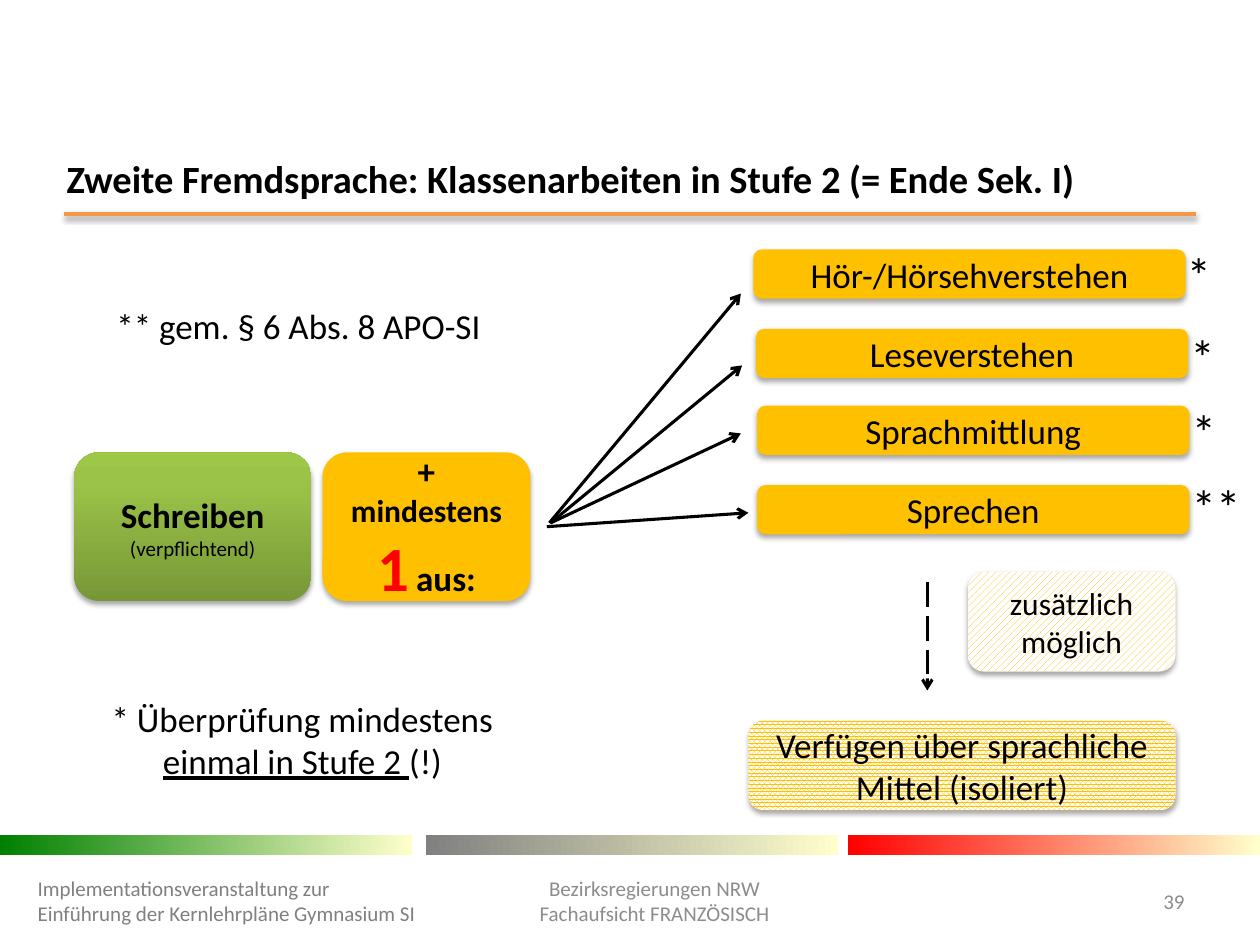
from copy import deepcopy

from lxml import etree
from pptx import Presentation
from pptx.dml.color import RGBColor
from pptx.enum.dml import MSO_LINE, MSO_PATTERN
from pptx.enum.shapes import MSO_CONNECTOR, MSO_SHAPE
from pptx.enum.text import MSO_ANCHOR, PP_ALIGN
from pptx.oxml.ns import qn
from pptx.util import Inches, Pt

LEFT, CENTER, RIGHT = PP_ALIGN.LEFT, PP_ALIGN.CENTER, PP_ALIGN.RIGHT
TOP, MIDDLE = MSO_ANCHOR.TOP, MSO_ANCHOR.MIDDLE
RECT, ROUNDED = MSO_SHAPE.RECTANGLE, MSO_SHAPE.ROUNDED_RECTANGLE
STRAIGHT = MSO_CONNECTOR.STRAIGHT
LONG_DASH = MSO_LINE.LONG_DASH
DOTTED, DIAGONAL = MSO_PATTERN.PERCENT_80, MSO_PATTERN.WIDE_UPWARD_DIAGONAL

BLACK = RGBColor(0x00, 0x00, 0x00)
WHITE = RGBColor(0xFF, 0xFF, 0xFF)
RED = RGBColor(0xFF, 0x00, 0x00)
GREEN = RGBColor(0x00, 0x80, 0x00)
GREY = RGBColor(0x80, 0x80, 0x80)
FOOTER_GREY = RGBColor(0x8C, 0x8C, 0x8C)
CREAM = RGBColor(0xFF, 0xFF, 0xCC)
AMBER = RGBColor(0xFF, 0xC0, 0x00)
ORANGE = RGBColor(0xF7, 0x96, 0x46)
LEAF_STOPS = [(0, RGBColor(0x77, 0x97, 0x37)),
              (0.8, RGBColor(0x9B, 0xC3, 0x48)),
              (1, RGBColor(0x9D, 0xC7, 0x46))]

# Left and top of each skill, then its footnote mark with left, top, width
SKILLS = [
    ("Hör-/Hörsehverstehen", 5.98, 1.98, "*", 9.32, 1.89, 0.36),
    ("Leseverstehen", 6, 2.61, "*", 9.35, 2.54, 0.36),
    ("Sprachmittlung", 6.01, 3.22, "*", 9.36, 3.14, 0.36),
    ("Sprechen", 6.01, 3.85, "**", 9.36, 3.73, 0.64),
]
SKILL_ARROWS = [
    ((4.36, 4.15), (5.88, 2.33)),
    ((4.37, 4.15), (5.89, 2.9)),
    ((4.37, 4.15), (5.88, 3.44)),
    ((4.34, 4.18), (5.94, 4.07)),
]


def set_shadow(element, alpha=35, distance=1.8):
    """Give the element a soft shadow below it; alpha 0 means none."""
    properties = element.spPr
    for old in properties.findall(qn("a:effectLst")):
        properties.remove(old)
    effects = etree.SubElement(properties, qn("a:effectLst"))
    if alpha:
        outer = etree.SubElement(
            effects, qn("a:outerShdw"), blurRad=str(Pt(3.1)),
            dist=str(Pt(distance)), dir="5400000", rotWithShape="0")
        color = etree.SubElement(outer, qn("a:srgbClr"), val="000000")
        etree.SubElement(color, qn("a:alpha"), val=str(alpha * 1000))


def write(frame, paragraphs, size, color=BLACK, align=LEFT, anchor=TOP):
    """Write paragraphs; each is a string or a list of (text, format) runs."""
    frame.word_wrap = True
    frame.vertical_anchor = anchor
    for index, runs in enumerate(paragraphs):
        paragraph = frame.add_paragraph() if index else frame.paragraphs[0]
        paragraph.alignment = align
        for text, changes in [(runs, {})] if isinstance(runs, str) else runs:
            run = paragraph.add_run()
            run.text = text
            values = {"name": "Calibri", "size": Pt(size), "color": color} | changes
            run.font.color.rgb = values.pop("color")
            for key, value in values.items():
                setattr(run.font, key, value)


def add_text(slide, box, paragraphs, size, **style):
    label = slide.shapes.add_textbox(*map(Inches, box))
    write(label.text_frame, paragraphs, size, **style)


def add_block(slide, box, kind=ROUNDED, color=None, pattern=None, stops=None,
              angle=0, shadow=True, paragraphs=(), size=20):
    block = slide.shapes.add_shape(kind, *map(Inches, box))
    block.shadow.inherit = False
    block.line.fill.background()
    fill = block.fill
    if stops:
        fill.gradient()
        fill.gradient_angle = angle
        stop_list = block._element.spPr.find(qn("a:gradFill")).find(qn("a:gsLst"))
        for _ in stops[2:]:
            stop_list.append(deepcopy(stop_list[-1]))
        for stop, (position, stop_color) in zip(fill.gradient_stops, stops):
            stop.position = position
            stop.color.rgb = stop_color
    elif pattern:
        fill.patterned()
        fill.pattern = pattern
        fill.fore_color.rgb = color
        fill.back_color.rgb = WHITE
    else:
        fill.solid()
        fill.fore_color.rgb = color
    if shadow:
        set_shadow(block._element)
    write(block.text_frame, paragraphs, size, align=CENTER, anchor=MIDDLE)


def add_line(slide, start, end, color=BLACK, width=1.75, dash=None,
             arrow=True, shadow_alpha=0):
    connector = slide.shapes.add_connector(
        STRAIGHT, *map(Inches, (*start, *end)))
    connector.line.color.rgb = color
    connector.line.width = Pt(width)
    if dash:
        connector.line.dash_style = dash
    if arrow:
        etree.SubElement(connector.line._get_or_add_ln(),
                         qn("a:tailEnd"), type="arrow")
    set_shadow(connector._element, shadow_alpha, 1.6)


def add_frame(slide):
    # Title and rule
    add_text(slide, (0.43, 1.18, 8.93, 0.47),
             [[("Zweite Fremdsprache: Klassenarbeiten in Stufe 2 (= Ende Sek. I)",
                {"bold": True})]], 22)
    add_line(slide, (0.51, 1.7), (9.49, 1.7), ORANGE, 2,
             arrow=False, shadow_alpha=38)

    # Colour bars
    for left, color in [(0, GREEN), (3.38, GREY), (6.73, RED)]:
        add_block(slide, (left, 6.63, 3.27, 0.16), RECT,
                  stops=[(0, color), (1, CREAM)], shadow=False)

    # Footer
    add_text(slide, (0.2, 6.95, 3.24, 0.4),
             ["Implementationsveranstaltung zur Einführung der "
              "Kernlehrpläne Gymnasium SI"], 12, color=GREY, anchor=MIDDLE)
    add_text(slide, (3.74, 6.79, 2.91, 0.71),
             ["Bezirksregierungen NRW", "Fachaufsicht FRANZÖSISCH"], 12,
             color=FOOTER_GREY, align=CENTER, anchor=MIDDLE)
    add_text(slide, (8.86, 6.95, 0.64, 0.4), ["39"], 12,
             color=FOOTER_GREY, align=RIGHT, anchor=MIDDLE)


def add_required_parts(slide):
    bold = {"bold": True}
    add_block(slide, (0.59, 3.59, 1.88, 1.18), stops=LEAF_STOPS, angle=90,
              paragraphs=[[("Schreiben", bold)],
                          [("(verpflichtend)", {"size": Pt(12)})]])
    add_block(slide, (2.56, 3.59, 1.65, 1.18), color=AMBER, paragraphs=[[
        ("+", bold),
        (" mindestens ", bold | {"size": Pt(18)}),
        ("1", bold | {"size": Pt(36), "color": RED}),
        (" ", bold | {"size": Pt(18)}),
        ("aus:", bold)]])


def add_skills(slide):
    for skill, left, top, mark, mark_left, mark_top, mark_width in SKILLS:
        add_block(slide, (left, top, 3.43, 0.39), color=AMBER, paragraphs=[skill])
        add_text(slide, (mark_left, mark_top, mark_width, 0.57), [mark], 28)
    for start, end in SKILL_ARROWS:
        add_line(slide, start, end)


def add_optional_part(slide):
    add_line(slide, (7.36, 4.62), (7.36, 5.48), dash=LONG_DASH)
    add_block(slide, (7.68, 4.54, 1.65, 0.79), color=AMBER, pattern=DIAGONAL,
              paragraphs=["zusätzlich möglich"], size=18)
    add_block(slide, (5.94, 5.72, 3.39, 0.71), color=AMBER, pattern=DOTTED,
              paragraphs=["Verfügen über sprachliche Mittel (isoliert)"])


def add_footnotes(slide):
    add_block(slide, (0.56, 2.03, 3.62, 1.1), color=WHITE, shadow=False,
              paragraphs=["** gem. § 6 Abs. 8 APO-SI"])
    add_block(slide, (0.59, 5.32, 3.62, 1.1), color=WHITE, shadow=False,
              paragraphs=["* Überprüfung mindestens",
                          [("einmal in Stufe 2 ", {"underline": True}),
                           ("(!)", {})]])


def main():
    presentation = Presentation()
    presentation.slide_width = Inches(10)
    presentation.slide_height = Inches(7.5)
    slide = presentation.slides.add_slide(presentation.slide_layouts[6])
    add_frame(slide)
    add_required_parts(slide)
    add_skills(slide)
    add_optional_part(slide)
    add_footnotes(slide)
    presentation.save("out.pptx")


if __name__ == "__main__":
    main()
